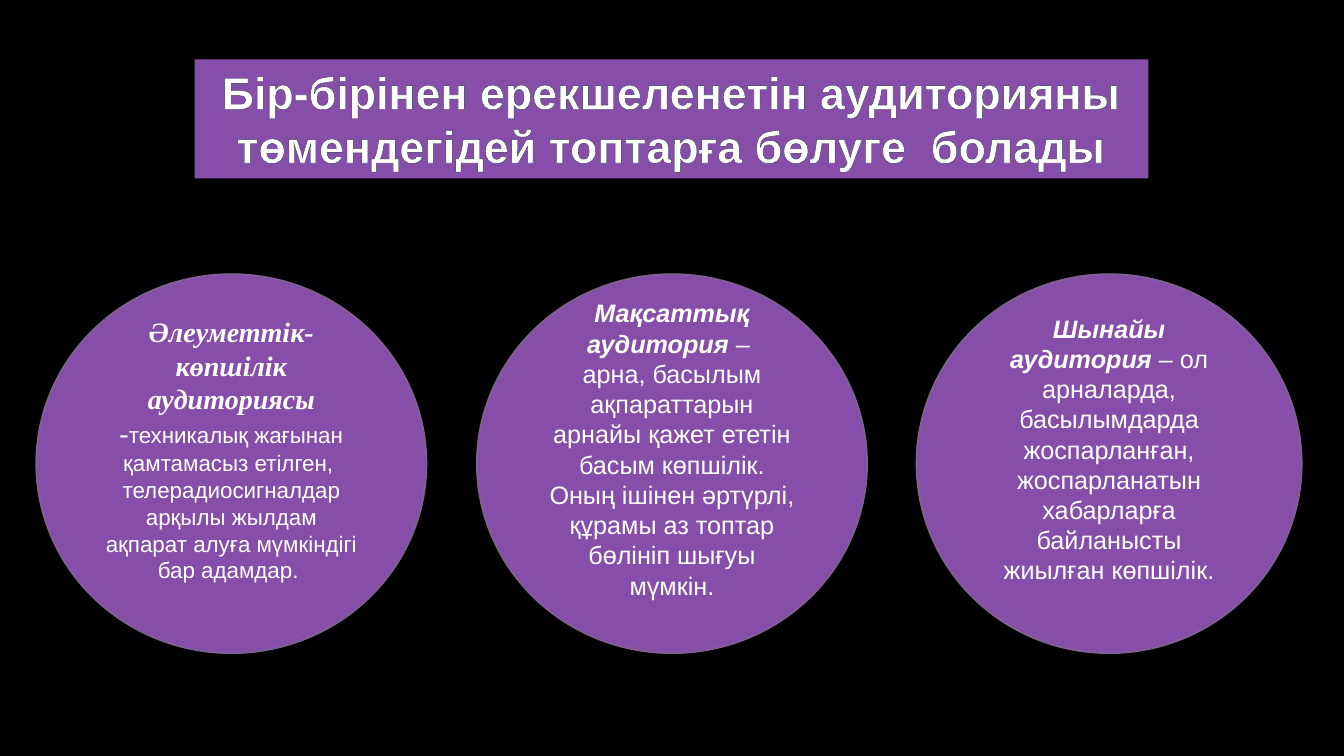
from lxml import etree
from pptx import Presentation
from pptx.dml.color import RGBColor
from pptx.enum import shapes, text
from pptx.oxml import ns
from pptx.util import Inches, Pt

COLORS = {"back": "000000", "purple": "874EA9", "edge": "806292",
          "white": "FFFFFF", "outline": "2E394D"}


def add_run(p, words, size=18, font="Arial", strong=False, italic=False):
    r = p.add_run()
    r.text = words
    r.font.size = Pt(size)
    r.font.name = font
    r.font.bold = strong
    r.font.italic = italic
    r.font.color.rgb = RGBColor.from_string(COLORS["white"])
    return r


def add_panel(s, kind, left, top, width, height):
    sp = s.shapes.add_shape(kind, Inches(left), Inches(top), Inches(width), Inches(height))
    sp.shadow.inherit = False
    sp.fill.solid()
    sp.fill.fore_color.rgb = RGBColor.from_string(COLORS["purple"])
    sp.line.fill.background()
    sp.text_frame.word_wrap = True
    return sp


prs = Presentation()
prs.slide_width = Inches(13.33)
prs.slide_height = Inches(7.5)
s = prs.slides.add_slide(prs.slide_layouts[6])
s.background.fill.solid()
s.background.fill.fore_color.rgb = RGBColor.from_string(COLORS["back"])

title = add_panel(s, shapes.MSO_SHAPE.RECTANGLE, 1.93, 0.59, 9.46, 1.18)
tf = title.text_frame
tf.vertical_anchor = text.MSO_ANCHOR.TOP
p = tf.paragraphs[0]
p.alignment = text.PP_ALIGN.CENTER
r = add_run(p, "Бір-бірінен ерекшеленетін аудиторияны төмендегідей топтарға бөлуге  болады",
            size=32, strong=True)
ln = etree.Element(ns.qn("a:ln"), w=str(Pt(1)))
fill = etree.SubElement(ln, ns.qn("a:solidFill"))
etree.SubElement(fill, ns.qn("a:srgbClr"), val=COLORS["outline"])
r.font._element.insert(0, ln)

term = {"strong": True, "italic": True}
serif = {"size": 20, "font": "Times New Roman"}
audiences = [
    (0.36, 3.87, [[
        ("Әлеуметтік-көпшілік аудиториясы ", {**serif, **term}),
        ("-", serif),
        ("техникалық жағынан қамтамасыз етілген,  телерадиосигналдар арқылы "
         "жылдам ақпарат алуға мүмкіндігі бар адамдар. ", {"size": 16})]]),
    (4.73, 3.87, [
        [("Мақсаттық аудитория ", term), ("– ", {})],
        [("арна, басылым ақпараттарын арнайы қажет ететін басым көпшілік. "
          "Оның ішінен әртүрлі, құрамы аз топтар бөлініп шығуы мүмкін.", {})]]),
    (9.09, 3.82, [[
        ("Шынайы аудитория ", term),
        ("– ол арналарда, басылымдарда жоспарланған, жоспарланатын хабарларға "
         "байланысты жиылған көпшілік.", {})]]),
]
for left, width, paragraphs in audiences:
    circle = add_panel(s, shapes.MSO_SHAPE.OVAL, left, 2.72, width, 3.76)
    circle.line.color.rgb = RGBColor.from_string(COLORS["edge"])
    circle.line.width = Pt(1.25)
    tf = circle.text_frame
    tf.vertical_anchor = text.MSO_ANCHOR.MIDDLE
    tf.margin_bottom = Inches(0.34)
    for i, runs in enumerate(paragraphs):
        p = tf.add_paragraph() if i else tf.paragraphs[0]
        p.alignment = text.PP_ALIGN.CENTER
        for words, style in runs:
            add_run(p, words, **style)

prs.save("out.pptx")
